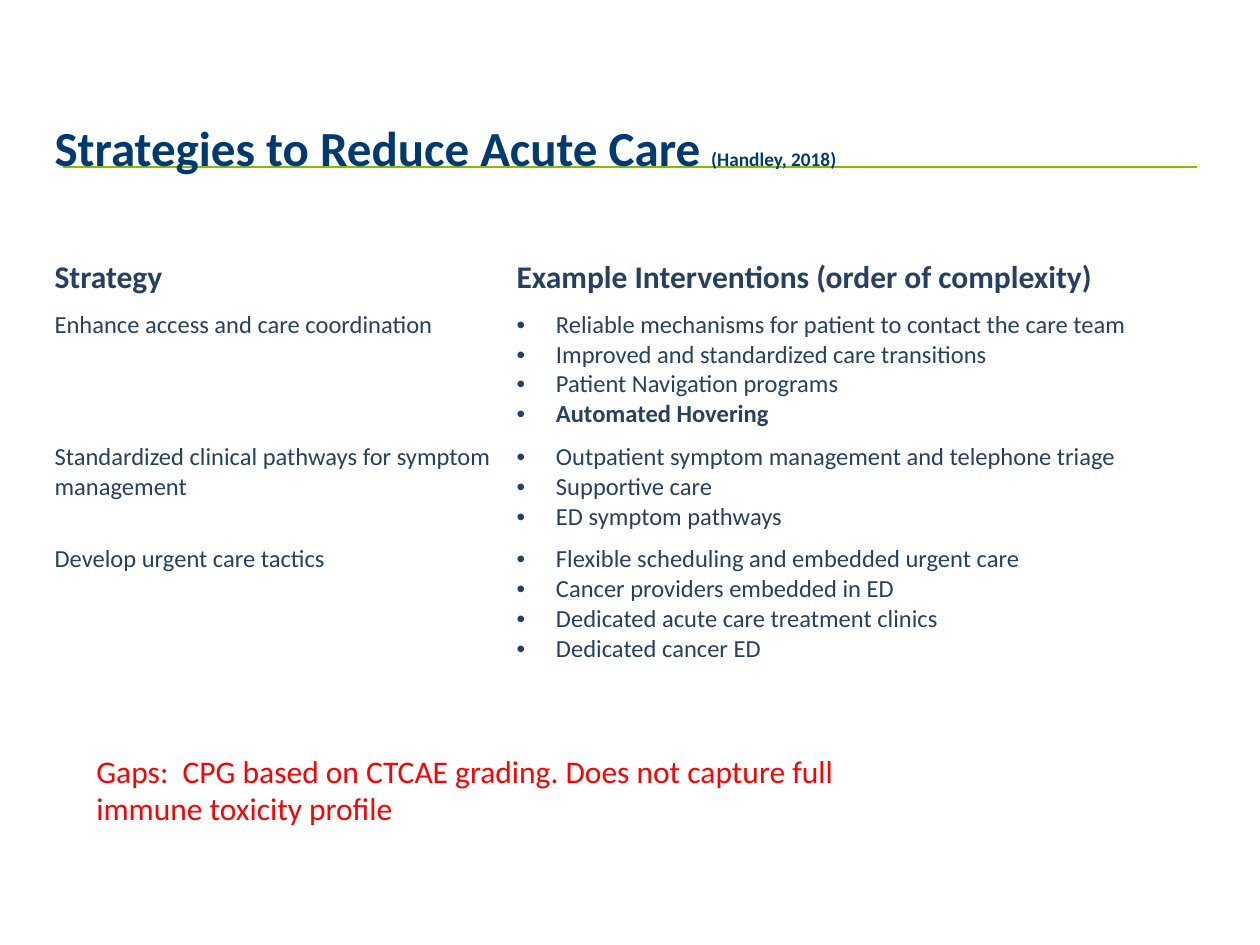
import pptx
import pptx.dml.color
import pptx.enum.shapes
import pptx.enum.text
import pptx.oxml.ns
import pptx.util
from lxml import etree

Pt = pptx.util.Pt
RGBColor = pptx.dml.color.RGBColor
NAVY = RGBColor(0x00, 0x3A, 0x70)
SLATE = RGBColor(0x25, 0x40, 0x61)
GREEN = RGBColor(0x84, 0xBD, 0x00)
RED = RGBColor(0xFF, 0x00, 0x00)
WHITE = RGBColor(0xFF, 0xFF, 0xFF)

HEADINGS = ("Strategy", "Example Interventions (order of complexity)")
STRATEGIES = {
    "Enhance access and care coordination": [
        "Reliable mechanisms for patient to contact the care team",
        "Improved and standardized care transitions",
        "Patient Navigation programs",
        "Automated Hovering",
    ],
    "Standardized clinical pathways for symptom management": [
        "Outpatient symptom management and telephone triage",
        "Supportive care",
        "ED symptom pathways",
    ],
    "Develop urgent care tactics": [
        "Flexible scheduling and embedded urgent care",
        "Cancer providers embedded in ED",
        "Dedicated acute care treatment clinics",
        "Dedicated cancer ED",
    ],
}
EMPHASIZED = "Automated Hovering"
LEFT = 24
HEADER_HEIGHT, LINE_HEIGHT, CELL_PADDING = 29.5, 17.1, 7.2
BULLET_INDENT = 22.5


def add_span(para, text, size, color, bold=False):
    span = para.add_run()
    span.text = text
    style = {"name": "Calibri", "size": Pt(size), "bold": bold}
    for key, value in style.items():
        setattr(span.font, key, value)
    span.font.color.rgb = color


def add_xml(parent, tag, **attributes):
    return etree.SubElement(parent, pptx.oxml.ns.qn(tag), attributes)


deck = pptx.Presentation()
deck.slide_width, deck.slide_height = Pt(720), Pt(540)
page = deck.slides.add_slide(deck.slide_layouts.get_by_name("Title Only"))

# Title
title = page.shapes.title
title_place = {"left": Pt(LEFT), "top": Pt(48), "width": Pt(582), "height": Pt(72)}
for key, value in title_place.items():
    setattr(title, key, value)
title.text_frame.vertical_anchor = pptx.enum.text.MSO_ANCHOR.MIDDLE
para = title.text_frame.paragraphs[0]
para.alignment = pptx.enum.text.PP_ALIGN.LEFT
add_span(para, "Strategies to Reduce Acute Care ", 28, NAVY, True)
add_span(para, "(Handley, 2018)", 11, NAVY, True)

# Green rule, behind the title
rule = page.shapes.add_connector(
    pptx.enum.shapes.MSO_CONNECTOR.STRAIGHT, Pt(36), Pt(95.5), Pt(684), Pt(95.5))
rule.line.color.rgb = GREEN
rule.line.width = Pt(0.75)
add_xml(rule.element.spPr, "a:effectLst")
title.element.addprevious(rule.element)

# Table of strategies and interventions
heights = [HEADER_HEIGHT] + [
    len(items) * LINE_HEIGHT + CELL_PADDING for items in STRATEGIES.values()]
table = page.shapes.add_table(
    len(heights), 2, Pt(LEFT), Pt(144), Pt(672), Pt(sum(heights))).table
for column, width in zip(table.columns, (264, 408)):
    column.width = Pt(width)
for row, height in zip(table.rows, heights):
    row.height = Pt(height)

for column, heading in enumerate(HEADINGS):
    add_span(table.cell(0, column).text_frame.paragraphs[0], heading, 18, SLATE, True)

for row, (strategy, items) in enumerate(STRATEGIES.items(), start=1):
    add_span(table.cell(row, 0).text_frame.paragraphs[0], strategy, 14, SLATE)
    frame = table.cell(row, 1).text_frame
    for index, item in enumerate(items):
        para = frame.add_paragraph() if index else frame.paragraphs[0]
        properties = para._p.get_or_add_pPr()
        properties.set("marL", str(Pt(BULLET_INDENT)))
        properties.set("indent", str(-Pt(BULLET_INDENT)))
        add_xml(properties, "a:buFont", typeface="Arial")
        add_xml(properties, "a:buChar", char="•")
        add_span(para, item, 14, SLATE, item == EMPHASIZED)

# White cell borders and fills
for row_index, row in enumerate(table.rows):
    for cell in row.cells:
        properties = cell._tc.get_or_add_tcPr()
        for side in ("L", "R", "T", "B"):
            heavy = (row_index, side) in ((0, "B"), (1, "T"))
            border = add_xml(properties, f"a:ln{side}", w=str(Pt(3 if heavy else 1)))
            paint = add_xml(border, "a:solidFill")
            add_xml(paint, "a:srgbClr", val=str(WHITE))
        cell.fill.solid()
        cell.fill.fore_color.rgb = WHITE

# Note on gaps
box = page.shapes.add_textbox(Pt(48), Pt(426), Pt(464), Pt(51))
box.text_frame.word_wrap = True
box.text_frame.auto_size = pptx.enum.text.MSO_AUTO_SIZE.SHAPE_TO_FIT_TEXT
add_span(
    box.text_frame.paragraphs[0],
    "Gaps:  CPG based on CTCAE grading. Does not capture full immune toxicity profile",
    18, RED)

deck.save("out.pptx")
